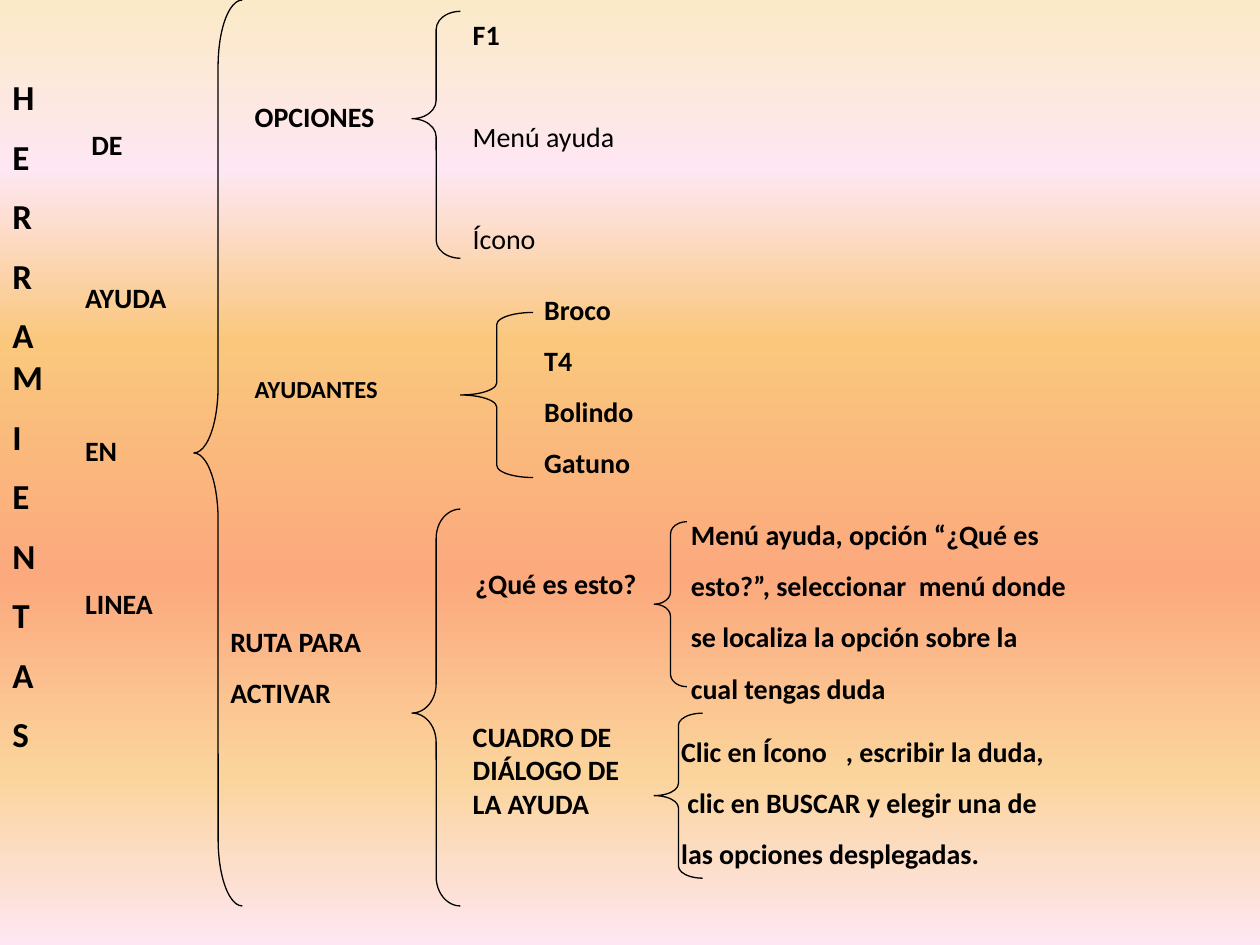
from lxml.etree import SubElement
from pptx import Presentation
from pptx.dml.color import RGBColor as RGB
from pptx.enum.shapes import MSO_SHAPE as Shape
from pptx.oxml.ns import qn
from pptx.util import Inches, Pt

COLORS = {
    "ink": "000000", "cream": "FBEAC7", "pink": "FEE7F2",
    "gold": "FAC77D", "coral": "FBA97D", "sand": "FBD49C",
}
WIDTH, HEIGHT = 10, 7.5
COLUMN, ROW = WIDTH / 52, HEIGHT / 75


def place(left, top, width, height):
    return [Inches(left * COLUMN), Inches(top * ROW),
            Inches(width * COLUMN), Inches(height * ROW)]


deck = Presentation()
deck.slide_width, deck.slide_height = Inches(WIDTH), Inches(HEIGHT)
slide = deck.slides.add_slide(deck.slide_layouts[6])

backdrop = slide.background.fill
backdrop.gradient()
backdrop.gradient_angle = 270
stops = slide.element.find(".//" + qn("a:gsLst"))
for stop in list(stops):
    stops.remove(stop)
for percent, name in [(0, "cream"), (18, "pink"), (36, "gold"),
                      (61, "coral"), (82, "sand"), (100, "pink")]:
    stop = SubElement(stops, qn("a:gs"), pos=str(percent * 1000))
    SubElement(stop, qn("a:srgbClr"), val=COLORS[name])

labels = [
    (3, 9.6, 8, 46.7, 16, 68.3, [" DE", "AYUDA", "EN", "LINEA"]),
    (0, 5.5, 3, 65.6, 20, 10,
     ["H", "E", "R", "R", "AM", "I", "E", "N", "T", "A", "S"]),
    (10, 7.4, 8, 6.5, 16, 10, ["OPCIONES"]),
    (10, 29.2, 8, 4.4, 14, 10, ["AYUDANTES"]),
    (9, 49.1, 8, 9, 16, 10, ["RUTA PARA", "ACTIVAR"]),
    (19, 0.9, 13, 21.4, 16, 39, ["F1", "Menú ayuda", "Ícono"]),
    (21.95, 22.7, 8, 15.2, 16, 10, ["Broco", "T4", "Bolindo", "Gatuno"]),
    (27.6, 57.8, 20, 13.1, 16, 10,
     ["Clic en Ícono   , escribir la duda,",
      " clic en BUSCAR y elegir una de",
      "las opciones desplegadas."]),
    (19.1, 44.5, 8, 8.7, 16, 10, ["¿Qué es esto?"]),
    (19, 56.6, 8, 13.1, 16, 10, ["CUADRO DE DIÁLOGO DE  LA AYUDA"]),
    (28, 40.6, 24, 13.1, 16, 10,
     ["Menú ayuda, opción “¿Qué es",
      "esto?”, seleccionar  menú donde",
      "se localiza la opción sobre la",
      "cual tengas duda"]),
]
plain = {"Menú ayuda", "Ícono"}
for *area, size, gap, lines in labels:
    frame = slide.shapes.add_textbox(*place(*area)).text_frame
    frame.word_wrap = True
    frame.text = "\n".join(lines)
    for para in frame.paragraphs:
        para.space_after = Pt(gap)
        para.font.name = "Calibri"
        para.font.size = Pt(size)
        para.font.bold = para.text not in plain
        para.font.color.rgb = RGB.from_string(COLORS["ink"])

braces = [
    (8, 0, 2, 71.9, 1.375, 0.5),
    (17, 0.9, 2, 19.6, 0.375, 0.435),
    (19, 24.8, 3, 13.1, 0.167, 0.5),
    (17, 40.4, 2, 31.5, 0.603, 0.514),
    (27, 41.4, 1.35, 13.1, 0.375, 0.5),
    (27, 56.6, 2, 13.1, 0.25, 0.5),
]
for *area, curl, tip in braces:
    brace = slide.shapes.add_shape(Shape.LEFT_BRACE, *place(*area))
    brace.adjustments[0], brace.adjustments[1] = curl, tip
    brace.shadow.inherit = False
    brace.fill.background()
    brace.line.color.rgb = RGB.from_string(COLORS["ink"])
    brace.line.width = Pt(0.75)

deck.save("out.pptx")
